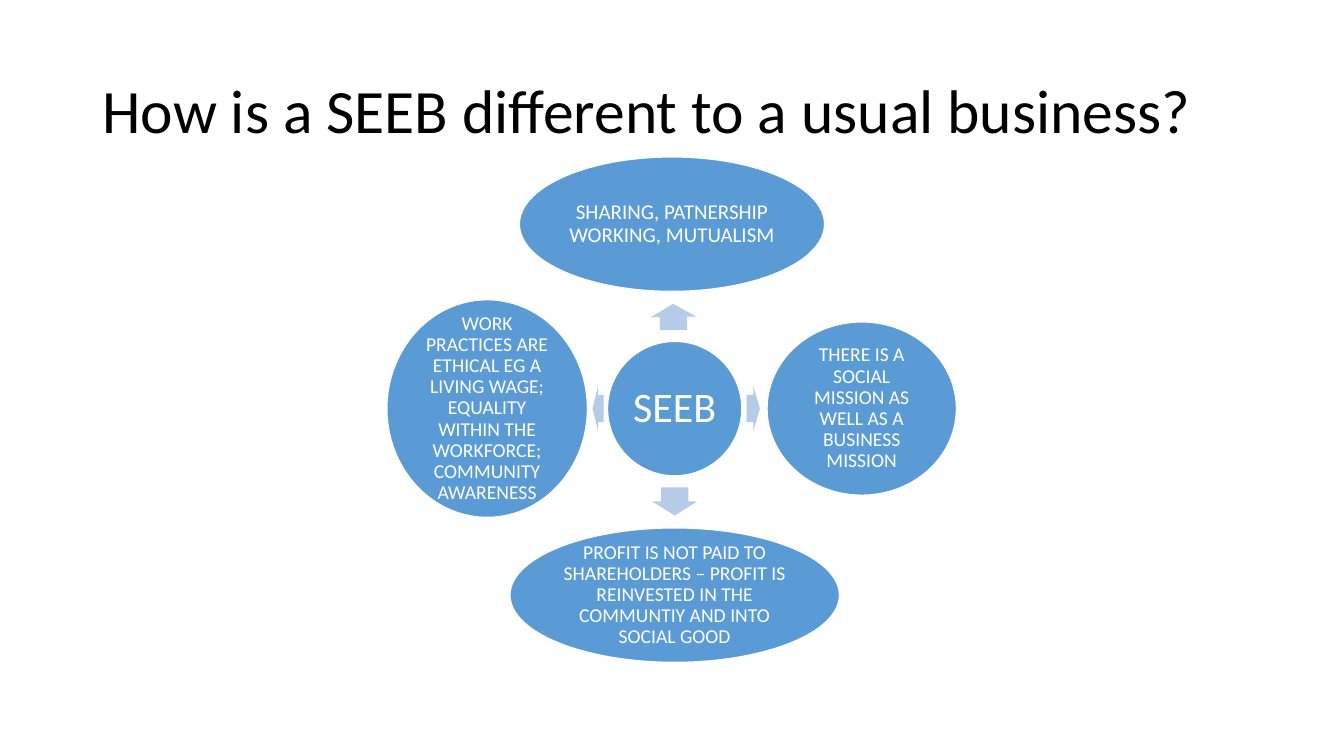
"""Builds a slide with a SEEB hub and four radiating ideas."""
import pptx
import pptx.util
import pptx.dml.color
import pptx.enum.shapes
import pptx.enum.text

SHAPE = pptx.enum.shapes.MSO_SHAPE
ALIGN = pptx.enum.text.PP_ALIGN

prs = pptx.Presentation()
prs.slide_width = pptx.util.Inches(13.333)
prs.slide_height = pptx.util.Inches(7.5)
col, row = prs.slide_width / 100, prs.slide_height / 100
s = prs.slides.add_slide(prs.slide_layouts[6])


def rgb(value):
    return pptx.dml.color.RGBColor.from_string(value)


def write(sp, text, size, color, align, inset):
    tf = sp.text_frame
    margins = {f"margin_{side}": pptx.util.Inches(inset) for side in ("left", "right", "top", "bottom")}
    frame = {"word_wrap": True, "vertical_anchor": pptx.enum.text.MSO_ANCHOR.MIDDLE, **margins}
    p = tf.paragraphs[0]
    r = p.add_run()
    r.text = text
    r.font.color.rgb = rgb(color)
    formats = (
        (tf, frame),
        (p, {"alignment": align, "line_spacing": 0.9}),
        (r.font, {"name": "Calibri", "size": pptx.util.Pt(size)}),
    )
    for target, values in formats:
        for name, value in values.items():
            setattr(target, name, value)


title = s.shapes.add_textbox(int(6.88 * col), int(5.32 * row), int(86.25 * col), int(19.33 * row))
write(title, "How is a SEEB different to a usual business?", 44, "000000", ALIGN.LEFT, 0.1)

hub_x, hub_y = 50.2, 54.05

arrows = [
    (-0.1, -12.13, 1.95, 269.1),
    (5.85, 0, 0.98, 0),
    (0, 12.27, 2.1, 90),
    (-5.7, 0, 0.83, 180),
]
for dx, dy, length, turn in arrows:
    w, h = length * col, 6 * row
    x, y = (hub_x + dx) * col, (hub_y + dy) * row
    sp = s.shapes.add_shape(SHAPE.RIGHT_ARROW, int(x - w / 2), int(y - h / 2), int(w), int(h))
    sp.adjustments[0], sp.adjustments[1] = 0.6, 0.5
    sp.rotation = turn
    sp.shadow.inherit = False
    sp.fill.solid()
    sp.fill.fore_color.rgb = rgb("B5CBE7")
    sp.line.fill.background()

ellipses = [
    (0, 0, 10, 17.8, 30, 0.04, "SEEB"),
    (-0.2, -24.4, 22.72, 17.8, 15, 0.02, "SHARING, PATNERSHIP WORKING, MUTUALISM"),
    (13.92, 0, 14.1, 22.93, 14, 0.02, "THERE IS A SOCIAL MISSION AS WELL AS A BUSINESS MISSION"),
    (0, 24.67, 24.53, 17.8, 14, 0.02,
     "PROFIT IS NOT PAID TO SHAREHOLDERS – PROFIT IS REINVESTED IN THE COMMUNTIY AND INTO SOCIAL GOOD"),
    (-13.95, 0, 14.93, 28.8, 14, 0.02,
     "WORK PRACTICES ARE ETHICAL EG A LIVING WAGE; EQUALITY WITHIN THE WORKFORCE; COMMUNITY AWARENESS"),
]
for dx, dy, cols, rows, size, inset, text in ellipses:
    w, h = cols * col, rows * row
    x, y = (hub_x + dx) * col, (hub_y + dy) * row
    sp = s.shapes.add_shape(SHAPE.OVAL, int(x - w / 2), int(y - h / 2), int(w), int(h))
    sp.shadow.inherit = False
    sp.fill.solid()
    sp.fill.fore_color.rgb = rgb("5B9BD5")
    sp.line.color.rgb = rgb("FFFFFF")
    sp.line.width = pptx.util.Pt(1)
    write(sp, text, size, "FFFFFF", ALIGN.CENTER, inset)

prs.save("out.pptx")
